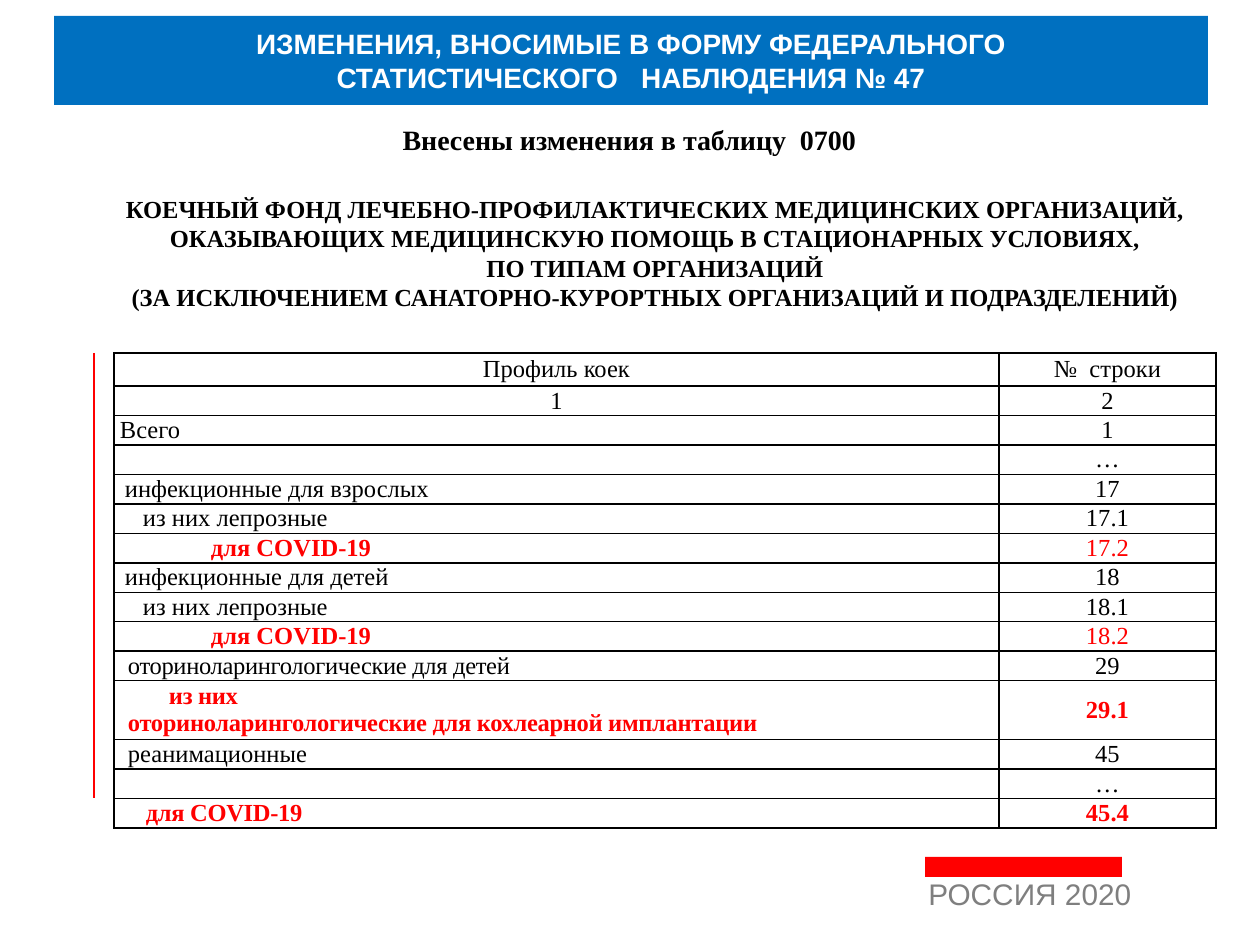
from typing import NamedTuple

from lxml.etree import SubElement
from pptx import Presentation
from pptx.dml.color import RGBColor
from pptx.enum.shapes import MSO_CONNECTOR as Connector, MSO_SHAPE as Shape
from pptx.enum.text import MSO_ANCHOR as Anchor, PP_ALIGN as Align
from pptx.oxml.ns import qn
from pptx.util import Pt

EMU_PER_PX = 914400 / 126
BLACK, WHITE, RED, BLUE, GREY = "000000", "FFFFFF", "FF0000", "0070C0", "7F7F7F"
SERIF, SANS = "Times New Roman", "Arial"
LINE_HEIGHT = 29


class Style(NamedTuple):
    size: int
    font: str = SERIF
    color: str = BLACK
    bold: bool = False
    align: Align = Align.CENTER
    tracking: int = 0


class Box(NamedTuple):
    left: int
    top: int
    width: int
    height: int


class Row(NamedTuple):
    profile: str
    number: str
    margin: int = 0
    first_line: int = 0
    color: str = BLACK
    profile_bold: bool = False
    number_bold: bool = False
    align: Align = Align.LEFT
    tracking: int = 0
    height: int = LINE_HEIGHT


ROWS = [
    Row("Профиль коек", "№  строки", align=Align.CENTER, height=33),
    Row("1", "2", align=Align.CENTER),
    Row("Всего", "1"),
    Row("", "…"),
    Row("инфекционные для взрослых", "17", 5),
    Row("из них лепрозные", "17.1", 23),
    Row("для COVID-19", "17.2", 91, color=RED, profile_bold=True),
    Row("инфекционные для детей", "18", 5),
    Row("из них лепрозные", "18.1", 23),
    Row("для COVID-19", "18.2", 91, color=RED, profile_bold=True),
    Row("оториноларингологические для детей", "29", 8, tracking=-20),
    Row("из них\vоториноларингологические для кохлеарной имплантации", "29.1",
        8, 41, RED, True, True, tracking=-20, height=2 * LINE_HEIGHT),
    Row("реанимационные", "45", 8),
    Row("", "…"),
    Row("для COVID-19", "45.4", 26, 0, RED, True, True, tracking=-20),
]


def px(length: int) -> int:
    return round(length * EMU_PER_PX)


def rgb(color: str) -> RGBColor:
    return RGBColor.from_string(color)


def write(text_frame, text: str, style: Style) -> None:
    text_frame.text = text
    for paragraph in text_frame.paragraphs:
        paragraph.alignment = style.align
        if not paragraph.runs:
            paragraph._p.get_or_add_endParaRPr().set("sz", str(style.size * 100))
        for run in paragraph.runs:
            run.font.size = Pt(style.size)
            run.font.name = style.font
            run.font.bold = style.bold
            run.font.color.rgb = rgb(style.color)
            if style.tracking:
                run.font._element.set("spc", str(style.tracking))


def add_bar(slide, box: Box, color: str):
    bar = slide.shapes.add_shape(Shape.RECTANGLE, *map(px, box))
    bar.shadow.inherit = False
    bar.fill.solid()
    bar.fill.fore_color.rgb = rgb(color)
    bar.line.fill.background()
    return bar


def add_label(slide, box: Box, text: str, style: Style, anchor: Anchor = Anchor.MIDDLE):
    label = slide.shapes.add_textbox(*map(px, box))
    label.text_frame.word_wrap = True
    label.text_frame.vertical_anchor = anchor
    write(label.text_frame, text, style)
    return label


def add_change_mark(slide, x: int, top: int, bottom: int) -> None:
    mark = slide.shapes.add_connector(Connector.STRAIGHT, px(x), px(top), px(x), px(bottom))
    mark.line.color.rgb = rgb(RED)
    mark.line.width = Pt(0.75)
    SubElement(mark._element.spPr, qn("a:effectLst"))


def add_borders(cell) -> None:
    properties = cell._tc.get_or_add_tcPr()
    for index, side in enumerate(("lnL", "lnR", "lnT", "lnB")):
        border = properties.makeelement(qn(f"a:{side}"), {"w": str(Pt(1))})
        fill = SubElement(border, qn("a:solidFill"))
        SubElement(fill, qn("a:srgbClr"), val=BLACK)
        properties.insert(index, border)


def fill_cell(cell, text: str, style: Style) -> None:
    cell.margin_left = cell.margin_right = px(6)
    cell.margin_top = cell.margin_bottom = 0
    cell.vertical_anchor = Anchor.MIDDLE
    cell.fill.background()
    add_borders(cell)
    write(cell.text_frame, text, style)


def add_bed_table(slide, left: int, top: int, widths: list[int], rows: list[Row]) -> None:
    box = Box(left, top, sum(widths), sum(row.height for row in rows))
    table = slide.shapes.add_table(len(rows), len(widths), *map(px, box)).table
    table.first_row = table.horz_banding = False
    for column, width in zip(table.columns, widths):
        column.width = px(width)
    for index, row in enumerate(rows):
        table.rows[index].height = px(row.height)
        profile, number = table.cell(index, 0), table.cell(index, 1)
        fill_cell(profile, row.profile, Style(14, color=row.color, bold=row.profile_bold,
                                              align=row.align, tracking=row.tracking))
        fill_cell(number, row.number, Style(14, color=row.color, bold=row.number_bold))
        indents = profile.text_frame.paragraphs[0]._p.get_or_add_pPr()
        indents.set("marL", str(px(row.margin)))
        indents.set("indent", str(px(row.first_line)))


def main() -> None:
    presentation = Presentation()
    presentation.slide_width, presentation.slide_height = px(1260), px(945)
    slide = presentation.slides.add_slide(presentation.slide_layouts[6])

    footer = add_label(slide, Box(916, 876, 237, 59), "РОССИЯ 2020",
                       Style(17, SANS, GREY, align=Align.LEFT), Anchor.TOP)
    footer.text_frame.paragraphs[0].line_spacing = 0.8
    add_bar(slide, Box(925, 857, 197, 20), RED)
    add_change_mark(slide, 94, 353, 798)

    title = add_bar(slide, Box(54, 16, 1154, 89), BLUE)
    title.text_frame.vertical_anchor = Anchor.MIDDLE
    write(title.text_frame,
          "ИЗМЕНЕНИЯ, ВНОСИМЫЕ В ФОРМУ ФЕДЕРАЛЬНОГО\n"
          "СТАТИСТИЧЕСКОГО   НАБЛЮДЕНИЯ № 47",
          Style(16, SANS, WHITE, True))

    add_label(slide, Box(64, 119, 1131, 40), "Внесены изменения в таблицу  0700",
              Style(16, bold=True))
    add_label(slide, Box(84, 187, 1142, 131),
              "КОЕЧНЫЙ ФОНД ЛЕЧЕБНО-ПРОФИЛАКТИЧЕСКИХ МЕДИЦИНСКИХ ОРГАНИЗАЦИЙ,\n"
              "ОКАЗЫВАЮЩИХ МЕДИЦИНСКУЮ ПОМОЩЬ В СТАЦИОНАРНЫХ УСЛОВИЯХ,\n"
              "ПО ТИПАМ ОРГАНИЗАЦИЙ\n"
              "(ЗА ИСКЛЮЧЕНИЕМ САНАТОРНО-КУРОРТНЫХ ОРГАНИЗАЦИЙ И ПОДРАЗДЕЛЕНИЙ)",
              Style(14, bold=True))
    add_bed_table(slide, 114, 353, [885, 217], ROWS)

    presentation.save("out.pptx")


if __name__ == "__main__":
    main()
